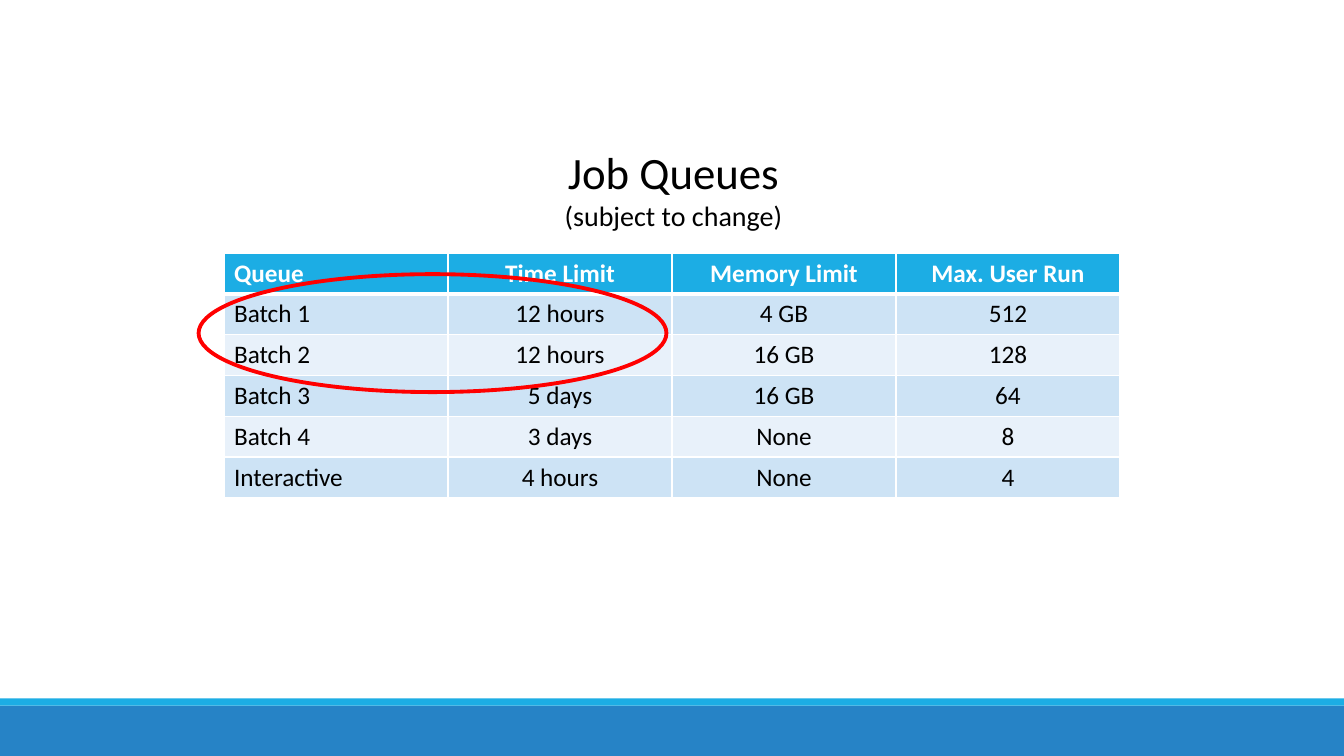
"""Build the job queues slide: a limits table with the short batch queues circled."""
import lxml.etree
import pptx
import pptx.dml.color
import pptx.enum.shapes
import pptx.enum.text
import pptx.oxml.ns
import pptx.util

COLORS = {
    "accent": "1CADE4",
    "footer": "2683C6",
    "odd_row": "CDE3F5",
    "even_row": "E8F1FA",
    "white": "FFFFFF",
    "black": "000000",
    "ring": "FF0000",
}
QUEUES = [
    ("Queue", "Time Limit", "Memory Limit", "Max. User Run"),
    ("Batch 1", "12 hours", "4 GB", "512"),
    ("Batch 2", "12 hours", "16 GB", "128"),
    ("Batch 3", "5 days", "16 GB", "64"),
    ("Batch 4", "3 days", "None", "8"),
    ("Interactive", "4 hours", "None", "4"),
]
Inches = pptx.util.Inches
Align = pptx.enum.text.PP_ALIGN
Shape = pptx.enum.shapes.MSO_SHAPE


def color(name):
    return pptx.dml.color.RGBColor.from_string(COLORS[name])


def style(para, size, ink, align, bold=False):
    para.alignment = align
    para.font.name = "Calibri"
    para.font.size = pptx.util.Pt(size)
    para.font.bold = bold
    para.font.color.rgb = color(ink)


deck = pptx.Presentation()
deck.slide_width = Inches(13.33)
deck.slide_height = Inches(7.5)
page = deck.slides.add_slide(deck.slide_layouts[6])

for top, height, fill in [(7, 0.5, "footer"), (6.93, 0.07, "accent")]:
    band = page.shapes.add_shape(
        Shape.RECTANGLE, 0, Inches(top), deck.slide_width, Inches(height))
    band.shadow.inherit = False
    band.fill.solid()
    band.fill.fore_color.rgb = color(fill)
    band.line.fill.background()

box = page.shapes.add_textbox(Inches(4.7), Inches(1.39), Inches(3.96), Inches(0.98))
box.text_frame.word_wrap = True
box.text_frame.text = "Job Queues\n(subject to change)"
for para, size in zip(box.text_frame.paragraphs, (32, 20)):
    style(para, size, "black", Align.CENTER)

column_width = deck.slide_width // 6
row_height = Inches(2.43) // len(QUEUES)
table = page.shapes.add_table(
    len(QUEUES), len(QUEUES[0]), column_width, Inches(2.51),
    column_width * len(QUEUES[0]), row_height * len(QUEUES)).table
for row, values in enumerate(QUEUES):
    header = row == 0
    fill = "accent" if header else "odd_row" if row % 2 else "even_row"
    for column, value in enumerate(values):
        cell = table.cell(row, column)
        cell.text = value
        style(cell.text_frame.paragraphs[0], 18, "white" if header else "black",
              Align.CENTER if column else Align.LEFT, header)
        properties = cell._tc.get_or_add_tcPr()
        for side in "LRTB":
            thick = (side == "B" and header) or (side == "T" and row == 1)
            border = lxml.etree.SubElement(
                properties, pptx.oxml.ns.qn(f"a:ln{side}"),
                w=str(pptx.util.Pt(3 if thick else 1)))
            solid = lxml.etree.SubElement(border, pptx.oxml.ns.qn("a:solidFill"))
            lxml.etree.SubElement(
                solid, pptx.oxml.ns.qn("a:srgbClr"), val=COLORS["white"])
        cell.fill.solid()
        cell.fill.fore_color.rgb = color(fill)

ring = page.shapes.add_shape(
    Shape.OVAL, Inches(1.97), Inches(2.72), Inches(4.64), Inches(1.17))
ring.shadow.inherit = False
ring.fill.background()
ring.line.color.rgb = color("ring")
ring.line.width = pptx.util.Pt(2.75)

deck.save("out.pptx")
